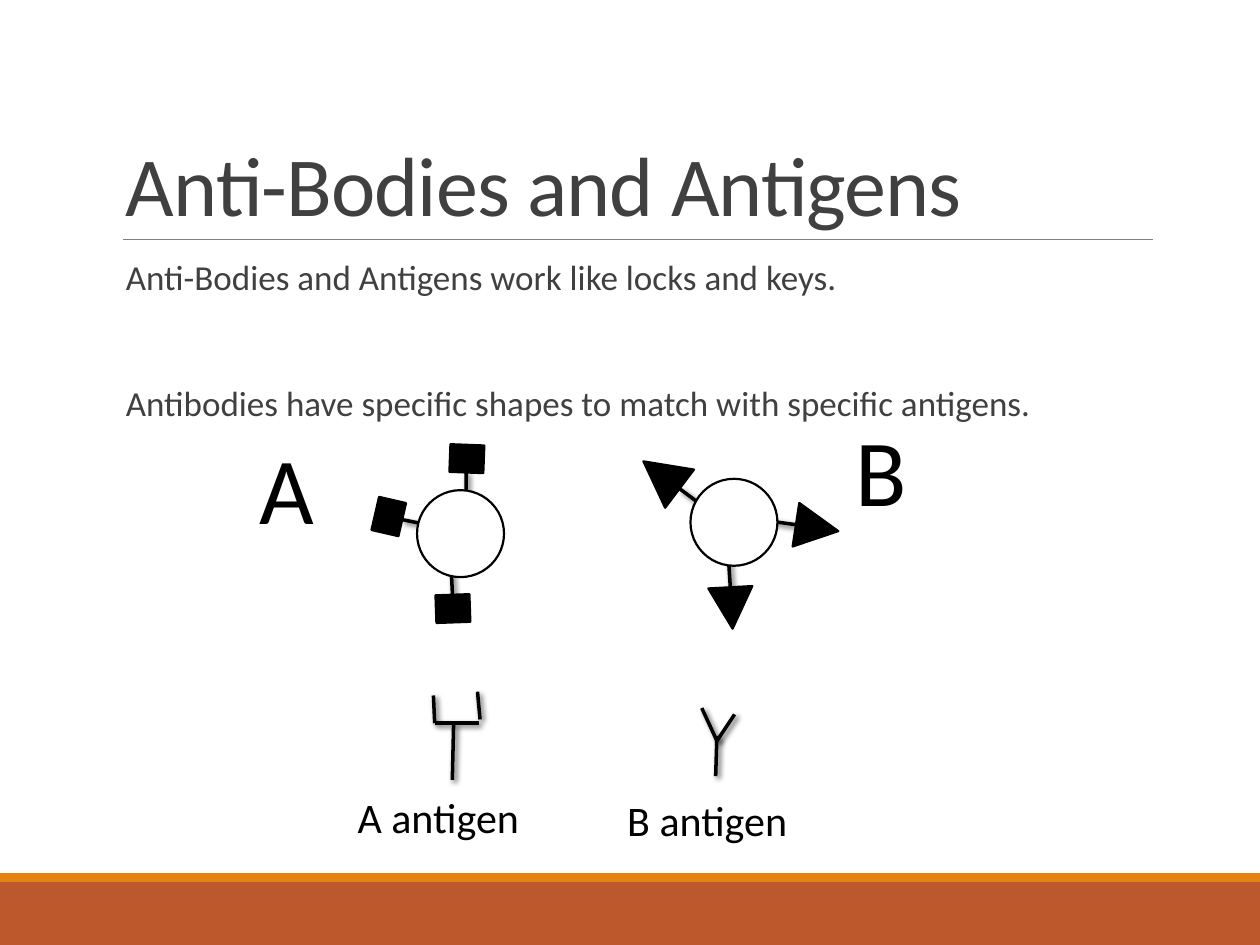
from dataclasses import dataclass
from math import cos, radians, sin

from lxml.etree import SubElement
from pptx import Presentation
from pptx.dml.color import RGBColor
from pptx.enum.shapes import MSO_CONNECTOR, MSO_SHAPE
from pptx.enum.text import MSO_ANCHOR, PP_ALIGN
from pptx.oxml.ns import qn
from pptx.util import Inches, Pt

STRAIGHT = MSO_CONNECTOR.STRAIGHT
RECTANGLE, OVAL = MSO_SHAPE.RECTANGLE, MSO_SHAPE.OVAL
TRIANGLE = MSO_SHAPE.ISOSCELES_TRIANGLE
TOP, BOTTOM = MSO_ANCHOR.TOP, MSO_ANCHOR.BOTTOM
LEFT, CENTER = PP_ALIGN.LEFT, PP_ALIGN.CENTER


@dataclass(frozen=True)
class Theme:
    font: str = "Calibri"
    ink: str = "000000"
    text: str = "404040"
    paper: str = "FFFFFF"
    rule: str = "808080"
    footer: str = "BD582C"
    accent: str = "E48312"
    title_size: int = 48
    body_size: int = 20
    label_size: int = 24
    letter_size: int = 54
    outline: float = 1.25
    stroke: float = 2
    hairline: float = 0.5


THEME = Theme()
WIDTH, HEIGHT = 10, 7.5
MARGIN, COLUMN = 0.9, 8.25
CELL_SIZE = 0.69

TITLE = "Anti-Bodies and Antigens"
BODY = [
    "Anti-Bodies and Antigens work like locks and keys.",
    "Antibodies have specific shapes to match with specific antigens.",
]
BANDS = [(7, 0.5, THEME.footer), (6.93, 0.07, THEME.accent)]  # top, height, colour

# Strokes of each receptor: start x, y, end x, y
RECEPTORS = [
    [(3.59, 6.19, 3.6, 5.75), (3.45, 5.74, 3.8, 5.74),
     (3.45, 5.74, 3.44, 5.52), (3.81, 5.71, 3.79, 5.49)],
    [(5.68, 6.16, 5.69, 5.84), (5.57, 5.62, 5.69, 5.88),
     (5.69, 5.88, 5.83, 5.67)],
]
# Each key: left, top, width, height, rotation, point where its stem meets the cell
CELLS = [
    {"at": (3.31, 3.89), "key": RECTANGLE, "site": 0, "side": -1, "keys": [
        (3.46, 4.72, 0.27, 0.22, 358, (3.58, 4.49)),
        (2.95, 3.99, 0.27, 0.22, 102.9, (3.42, 4.17)),
        (3.57, 3.53, 0.27, 0.22, 182.2, (3.7, 3.99))]},
    {"at": (5.48, 3.8), "key": TRIANGLE, "site": 3, "side": 1, "keys": [
        (5.63, 4.66, 0.35, 0.33, 176.9, (5.78, 4.41)),
        (6.31, 4.02, 0.35, 0.34, 98.7, (6.07, 4.13)),
        (5.06, 3.59, 0.38, 0.36, 307.1, (5.61, 4.04))]},
]
LABELS = [("A antigen", 2.74, 6.23), ("B antigen", 4.88, 6.26)]
LETTERS = [("A", 1.96, 3.36, 0.64), ("B", 6.69, 3.22, 0.61)]


def add_text(page, lines, left, top, width, height, size, color=THEME.ink,
             anchor=TOP, align=LEFT, wrap=True, line_spacing=1.0,
             before=(0,), after=0, tracking=None):
    box = page.shapes.add_textbox(*map(Inches, (left, top, width, height)))
    frame = box.text_frame
    frame.word_wrap = wrap
    frame.vertical_anchor = anchor
    for index, line in enumerate(lines):
        para = frame.paragraphs[0] if index == 0 else frame.add_paragraph()
        para.alignment = align
        para.line_spacing = line_spacing
        para.space_before = Pt(before[index])
        para.space_after = Pt(after)
        span = para.add_run()
        span.text = line
        span.font.name = THEME.font
        span.font.size = Pt(size)
        span.font.color.rgb = RGBColor.from_string(color)
        if tracking is not None:
            span.font._element.set("spc", str(round(tracking * 100)))


def add_figure(parent, kind, left, top, width, height, fill, line=None, rotation=0):
    figure = parent.shapes.add_shape(kind, *map(Inches, (left, top, width, height)))
    figure.shadow.inherit = False
    figure.rotation = rotation
    figure.fill.solid()
    figure.fill.fore_color.rgb = RGBColor.from_string(fill)
    if line:
        figure.line.color.rgb = RGBColor.from_string(line)
        figure.line.width = Pt(THEME.outline)
    else:
        figure.line.fill.background()
    return figure


def add_line(parent, points, color=THEME.ink, weight=THEME.stroke, shadow=True):
    line = parent.shapes.add_connector(STRAIGHT, *map(Inches, points))
    line.line.color.rgb = RGBColor.from_string(color)
    line.line.width = Pt(weight)
    effects = SubElement(line._element.spPr, qn("a:effectLst"))
    if shadow:
        outer = SubElement(effects, qn("a:outerShdw"), blurRad=str(Pt(3)),
                           dist=str(Pt(2)), dir=str(45 * 60000), rotWithShape="0")
        tone = SubElement(outer, qn("a:srgbClr"), val=THEME.ink)
        SubElement(tone, qn("a:alpha"), val="60000")
    return line


def add_cell(page, cell):
    """Draw a round cell whose rotated keys are joined to it by stems."""
    group = page.shapes.add_group_shape()
    for left, top, width, height, rotation, end in cell["keys"]:
        key = add_figure(group, cell["key"], left, top, width, height,
                         THEME.ink, THEME.ink, rotation)
        reach, angle = cell["side"] * height / 2, radians(rotation)
        start = (left + width / 2 - reach * sin(angle),
                 top + height / 2 + reach * cos(angle))
        stem = add_line(group, start + end)
        stem.begin_connect(key, cell["site"])
        # Joining ignores the key's rotation, so the start is set again.
        stem.begin_x, stem.begin_y = map(Inches, start)
    add_figure(group, OVAL, *cell["at"], CELL_SIZE, CELL_SIZE, THEME.paper, THEME.ink)


def main():
    deck = Presentation()
    deck.slide_width, deck.slide_height = Inches(WIDTH), Inches(HEIGHT)
    page = deck.slides.add_slide(deck.slide_layouts[6])

    for top, height, color in BANDS:
        add_figure(page, RECTANGLE, 0, top, WIDTH, height, color)
    add_line(page, (0.98, 1.9, MARGIN + COLUMN, 1.9), THEME.rule, THEME.hairline,
             shadow=False)
    add_text(page, [TITLE], MARGIN, 0.31, COLUMN, 1.59, THEME.title_size, THEME.text,
             anchor=BOTTOM, line_spacing=0.85, tracking=-0.5)
    add_text(page, BODY, MARGIN, 2.02, COLUMN, 4.4, THEME.body_size, THEME.text,
             line_spacing=0.9, before=(12, 48), after=2)

    for strokes in RECEPTORS:
        group = page.shapes.add_group_shape()
        for points in strokes:
            add_line(group, points)
    for label, left, top in LABELS:
        add_text(page, [label], left, top, 2.14, 0.5, THEME.label_size)
    for cell in CELLS:
        add_cell(page, cell)
    for letter, left, top, width in LETTERS:
        add_text(page, [letter], left, top, width, 1.01, THEME.letter_size,
                 align=CENTER, wrap=False)

    deck.save("out.pptx")


if __name__ == "__main__":
    main()
